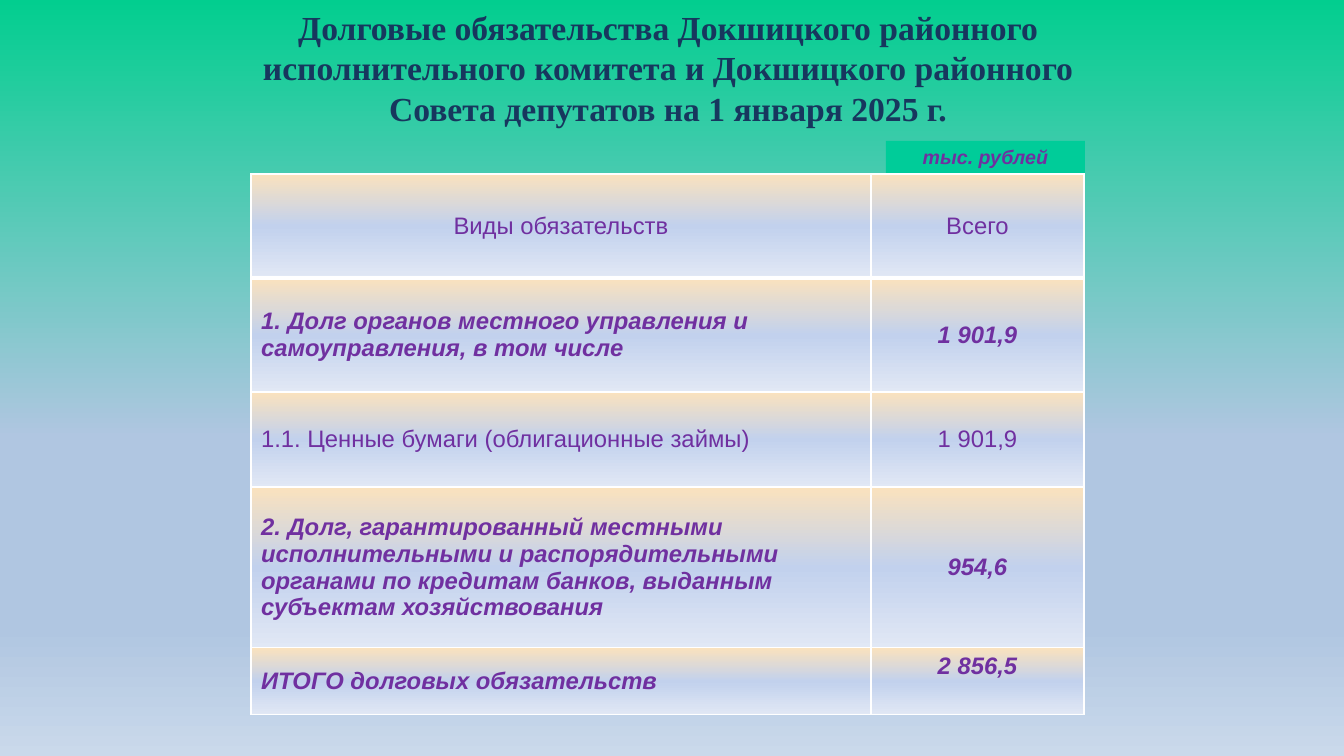
import pptx
import pptx.dml.color
import pptx.enum.shapes
import pptx.enum.text
import pptx.oxml
import pptx.oxml.ns
import pptx.util
from lxml import etree

RGB = pptx.dml.color.RGBColor
NAVY = RGB(0x17, 0x37, 0x5E)
PURPLE = RGB(0x70, 0x30, 0xA0)
GREEN = RGB(0x00, 0xCC, 0x99)
WHITE = RGB(0xFF, 0xFF, 0xFF)
BACKGROUND = [
    (0, RGB(0x02, 0xCE, 0x8F)),
    (58, RGB(0xB0, 0xC6, 0xE1)),
    (83, RGB(0xB0, 0xC6, 0xE1)),
    (100, RGB(0xCA, 0xD9, 0xEB)),
]
CELL_GRADIENT = [
    (0, RGB(0xFA, 0xE2, 0xBE)),
    (50, RGB(0xC2, 0xD1, 0xED)),
    (100, RGB(0xE1, 0xE8, 0xF5)),
]

ALIGN = pptx.enum.text.PP_ALIGN
ANCHOR = pptx.enum.text.MSO_ANCHOR
COLUMNS = [620, 213]
ROWS = [
    (104, "Виды обязательств", "Всего", False),
    (114, "1. Долг органов местного управления и самоуправления, в том числе", "1 901,9", True),
    (95, "1.1. Ценные бумаги (облигационные займы)", "1 901,9", False),
    (161, "2. Долг, гарантированный местными исполнительными и распорядительными "
          "органами по кредитам банков, выданным субъектам хозяйствования", "954,6", True),
    (67, "ИТОГО долговых обязательств", "2 856,5", True),
]


def px(n):
    """Turn pixels into EMU."""
    return pptx.util.Emu(round(n * 914400 / 100.8))


def write(tf, text, size, color, font="Arial", bold=False, italic=False, align=ALIGN.CENTER):
    """Put one formatted run into the first paragraph of a text frame."""
    tf.word_wrap = True
    p = tf.paragraphs[0]
    p.alignment = align
    r = p.add_run()
    r.text = text
    r.font.size = pptx.util.Pt(size)
    r.font.name = font
    r.font.bold = bold
    r.font.italic = italic
    r.font.color.rgb = color


def add_color(parent, color):
    """Append a solid RGB colour element."""
    etree.SubElement(parent, pptx.oxml.ns.qn("a:srgbClr"), val=str(color))


def set_gradient(fill, element, stops):
    """Give a fill a top-to-bottom gradient with the listed stops."""
    fill.gradient()
    fill.gradient_angle = 270
    gs_list = element.find(".//" + pptx.oxml.ns.qn("a:gsLst"))
    for gs in list(gs_list):
        gs_list.remove(gs)
    for position, color in stops:
        gs = etree.SubElement(gs_list, pptx.oxml.ns.qn("a:gs"), pos=str(position * 1000))
        add_color(gs, color)


def set_borders(tc_pr, bottom):
    """Draw white cell borders, with the bottom width in points."""
    for side, width in (("L", 1), ("R", 1), ("T", 1), ("B", bottom)):
        ln = etree.SubElement(tc_pr, pptx.oxml.ns.qn("a:ln" + side), w=str(pptx.util.Pt(width)))
        add_color(etree.SubElement(ln, pptx.oxml.ns.qn("a:solidFill")), WHITE)


def add_title(s, text, x, y, w, h):
    """Add the slide heading."""
    tf = s.shapes.add_textbox(px(x), px(y), px(w), px(h)).text_frame
    tf.vertical_anchor = ANCHOR.MIDDLE
    write(tf, text, 24, NAVY, font="Times New Roman", bold=True)


def add_unit_label(s, text, x, y, w, h):
    """Add the filled label with the unit of measure."""
    rect = pptx.enum.shapes.MSO_SHAPE.RECTANGLE
    sp = s.shapes.add_shape(rect, px(x), px(y), px(w), px(h))
    sp.shadow.inherit = False
    sp.fill.solid()
    sp.fill.fore_color.rgb = GREEN
    sp.line.fill.background()
    sp.text_frame.vertical_anchor = ANCHOR.MIDDLE
    write(sp.text_frame, text, 14, PURPLE, bold=True, italic=True)


def add_debt_table(s, x, y):
    """Add the table of debt obligations."""
    height = sum(row[0] for row in ROWS)
    frame = s.shapes.add_table(len(ROWS), len(COLUMNS), px(x), px(y), px(sum(COLUMNS)), px(height))
    table = frame.table
    for column, width in zip(table.columns, COLUMNS):
        column.width = px(width)
    for i, (height, name, amount, strong) in enumerate(ROWS):
        table.rows[i].height = px(height)
        for j, text in enumerate((name, amount)):
            cell = table.cell(i, j)
            tc_pr = cell._tc.get_or_add_tcPr()
            set_borders(tc_pr, 3 if i == 0 else 1)
            set_gradient(cell.fill, tc_pr, CELL_GRADIENT)
            cell.vertical_anchor = ANCHOR.MIDDLE
            align = ALIGN.LEFT if i > 0 and j == 0 else ALIGN.CENTER
            write(cell.text_frame, text, 17, PURPLE, bold=strong, italic=strong, align=align)
    table.cell(len(ROWS) - 1, 1).vertical_anchor = ANCHOR.TOP


def main():
    """Build and save the slide."""
    prs = pptx.Presentation()
    prs.slide_width, prs.slide_height = px(1344), px(756)
    s = prs.slides.add_slide(prs.slide_layouts[6])
    set_gradient(s.background.fill, s.element, BACKGROUND)
    add_title(s, "Долговые обязательства Докшицкого районного исполнительного комитета "
                 "и Докшицкого районного Совета депутатов на 1 января 2025 г.", 251, 20, 834, 95)
    add_debt_table(s, 251, 174)
    add_unit_label(s, "тыс. рублей", 886, 141, 199, 32)
    prs.save("out.pptx")


if __name__ == "__main__":
    main()
